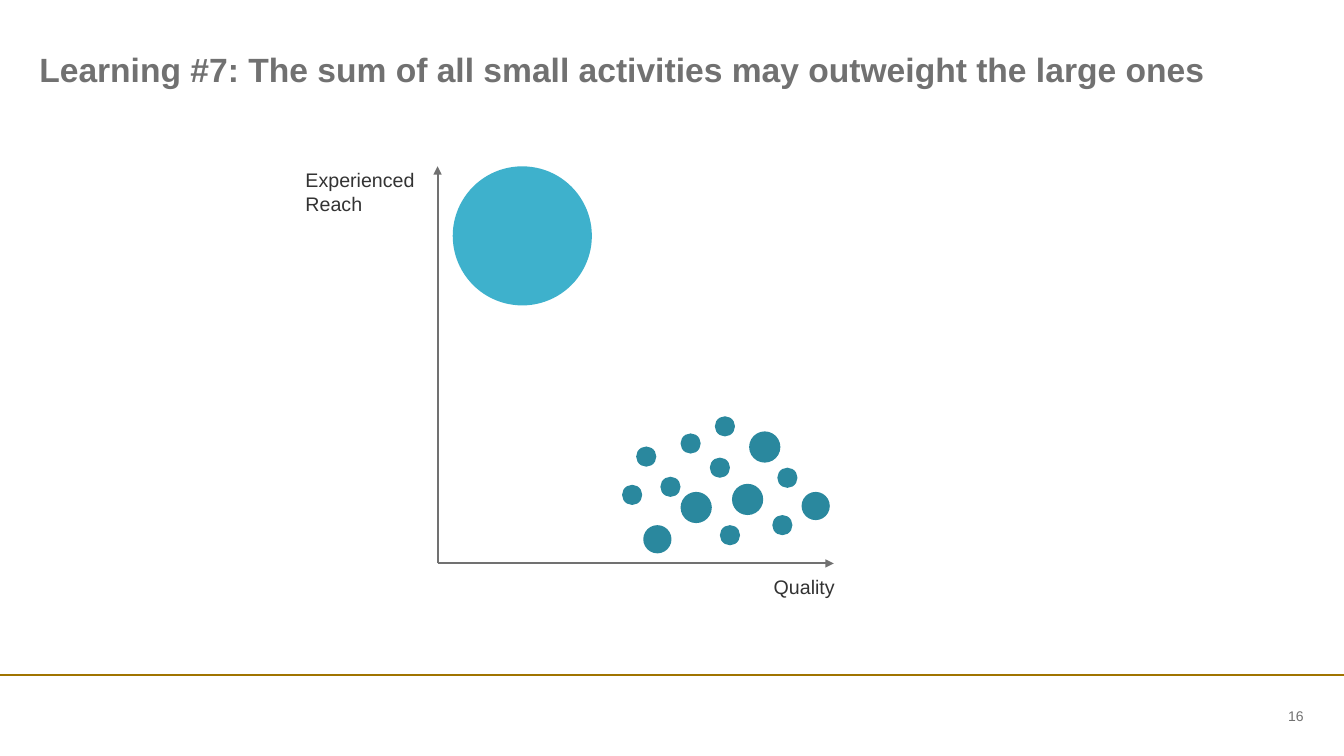
import dataclasses

import pptx
import pptx.dml.color
import pptx.enum.shapes
import pptx.enum.text
import pptx.oxml
import pptx.oxml.ns
import pptx.util

ALIGN = pptx.enum.text.PP_ALIGN
ANCHOR = pptx.enum.text.MSO_ANCHOR


@dataclasses.dataclass(frozen=True)
class Theme:
    font: str = "Arial"
    grey: str = "717171"
    ink: str = "333333"
    gold: str = "A07400"
    light_teal: str = "3EB1CC"
    dark_teal: str = "2A889E"
    title_size: int = 24
    label_size: int = 14
    number_size: int = 10
    line_width: float = 1.5


def rgb(color):
    return pptx.dml.color.RGBColor.from_string(color)


class Canvas:
    """Draws on one slide; lengths are columns and rows of 0.1 inch."""

    CELL = pptx.util.Inches(0.1)

    def __init__(self, slide, theme):
        self.s = slide
        self.theme = theme

    def grid(self, *cells):
        return [round(c * self.CELL) for c in cells]

    def text(self, box, text, size, color, bold=False,
             align=ALIGN.LEFT, anchor=ANCHOR.TOP):
        tf = self.s.shapes.add_textbox(*self.grid(*box)).text_frame
        tf.word_wrap = True
        tf.margin_left = tf.margin_right = tf.margin_top = tf.margin_bottom = 0
        tf.vertical_anchor = anchor
        tf.text = text
        p = tf.paragraphs[0]
        p.alignment = align
        font = p.runs[0].font
        font.name, font.size, font.bold = self.theme.font, pptx.util.Pt(size), bold
        font.color.rgb = rgb(color)

    def line(self, start, end, color, arrow=False):
        cn = self.s.shapes.add_connector(
            pptx.enum.shapes.MSO_CONNECTOR.STRAIGHT, *self.grid(*start, *end))
        cn.line.width = pptx.util.Pt(self.theme.line_width)
        cn.line.color.rgb = rgb(color)
        if arrow:
            ln = cn.line._get_or_add_ln()
            tail = pptx.oxml.ns.qn("a:tailEnd")
            ln.append(ln.makeelement(tail, {"type": "triangle"}))
        sp_pr = cn._element.spPr
        sp_pr.append(sp_pr.makeelement(pptx.oxml.ns.qn("a:effectLst"), {}))

    def bubble(self, left, top, size, color):
        sp = self.s.shapes.add_shape(pptx.enum.shapes.MSO_SHAPE.OVAL,
                                     *self.grid(left, top, size, size))
        sp.shadow.inherit = False
        sp.fill.solid()
        sp.fill.fore_color.rgb = rgb(color)
        sp.line.fill.background()


# Left and top of the small activities, by bubble size
SMALL_ACTIVITIES = {
    2: [(67.5, 43), (65.5, 47.3), (70.4, 45.4), (77.1, 46.4), (71.4, 52.1),
        (76.6, 51.1), (70.9, 41.3), (63.1, 44.3), (61.7, 48.1)],
    2.8: [(79.5, 48.8), (63.8, 52.1)],
    3.1: [(67.5, 48.8), (74.3, 42.8), (72.6, 48)],
}


def main():
    prs = pptx.Presentation()
    prs.slide_width = pptx.util.Inches(13.33)
    prs.slide_height = pptx.util.Inches(7.5)
    th = Theme()
    c = Canvas(prs.slides.add_slide(prs.slide_layouts[6]), th)

    # Title and footer
    c.line((0, 67), (133.3, 67), th.gold)
    c.text((3.9, 4.7, 125.4, 4.4),
           "Learning #7: The sum of all small activities may outweight the large ones",
           th.title_size, th.grey, bold=True, anchor=ANCHOR.MIDDLE)
    c.text((118.7, 69.9, 10.6, 2.2), "16", th.number_size, th.grey,
           align=ALIGN.RIGHT, anchor=ANCHOR.MIDDLE)

    # Axes
    origin = (43.4, 55.9)
    for tip in ((43.4, 16.5), (82.7, 55.9)):
        c.line(origin, tip, th.grey, arrow=True)
    c.text((30.3, 16.7, 11.6, 5), "Experienced Reach", th.label_size, th.ink)
    c.text((72.6, 57, 10.2, 5), "Quality", th.label_size, th.ink, align=ALIGN.RIGHT)

    # Small activities, then the large one
    for size, places in SMALL_ACTIVITIES.items():
        for left, top in places:
            c.bubble(left, top, size, th.dark_teal)
    c.bubble(44.9, 16.5, 13.8, th.light_teal)

    prs.save("out.pptx")


if __name__ == "__main__":
    main()
